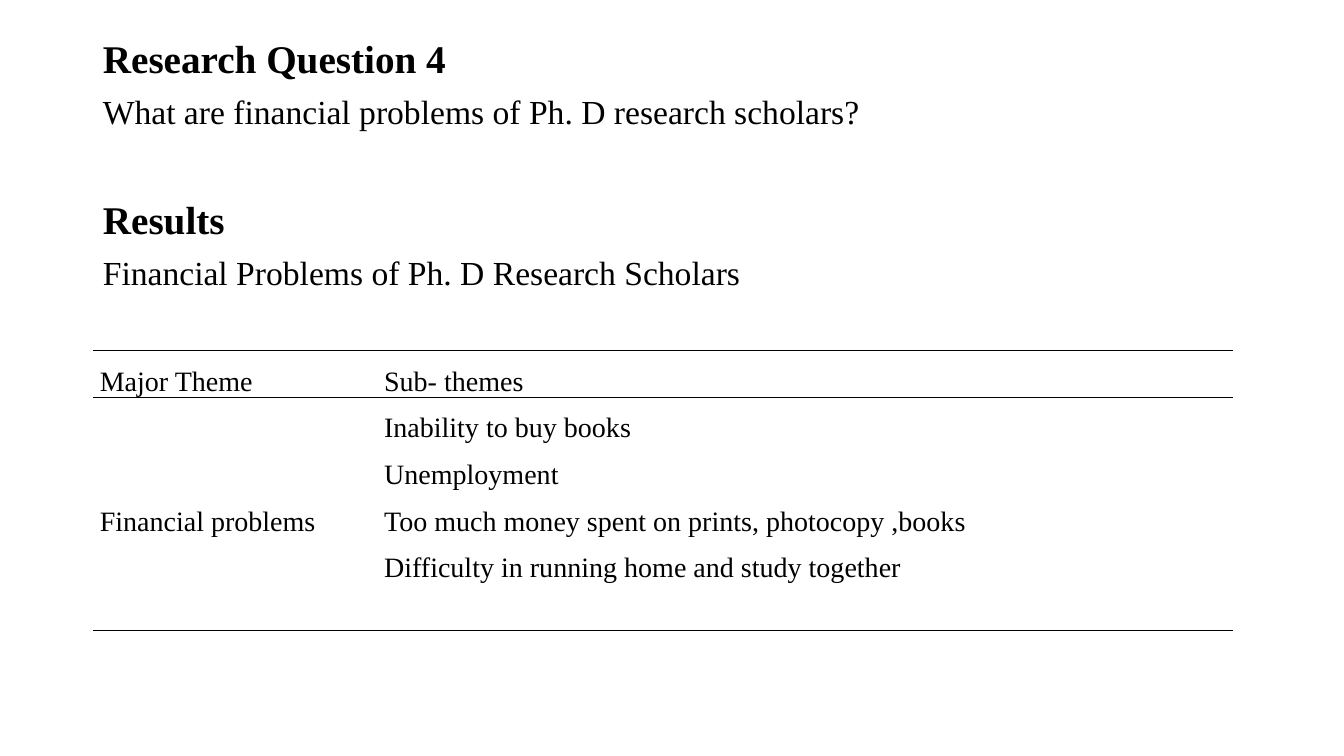
from lxml import etree
from pptx import Presentation
from pptx.dml.color import RGBColor
from pptx.enum.text import MSO_AUTO_SIZE
from pptx.oxml.ns import qn
from pptx.util import Inches, Pt

NO_AUTOFIT = MSO_AUTO_SIZE.NONE
FONT = "Times New Roman"
BLACK = "000000"

HEADING, DETAIL = (28, True), (24, False)
BODY_LINES = [
    ("Research Question 4", HEADING, 10),
    ("What are financial problems of Ph. D research scholars?", DETAIL, 10),
    ("Results", HEADING, 49),
    ("Financial Problems of Ph. D Research Scholars", DETAIL, 10),
]
THEME_ROWS = [
    ("Major Theme", "Sub- themes"),
    ("", "Inability to buy books"),
    ("", "Unemployment"),
    ("Financial problems", "Too much money spent on prints, photocopy ,books"),
    ("", "Difficulty in running home and study together"),
    ("", ""),
]
COLUMN_WIDTHS = (2.82, 8.49)
ROW_HEIGHT = 0.46
RULES_BY_ROW = {0: ("T", "B"), 1: ("T",), len(THEME_ROWS) - 1: ("B",)}


def color(value):
    return RGBColor.from_string(value)


def add_text(paragraph, text, size, bold=False):
    run = paragraph.add_run()
    run.text = text
    run.font.name = FONT
    run.font.size = Pt(size)
    run.font.bold = bold
    run.font.color.rgb = color(BLACK)


def set_borders(cell, ruled_sides):
    properties = cell._tc.get_or_add_tcPr()
    for position, side in enumerate("LRTB"):
        line = etree.Element(qn(f"a:ln{side}"), w=str(Pt(1)))
        if side in ruled_sides:
            fill = etree.SubElement(line, qn("a:solidFill"))
            etree.SubElement(fill, qn("a:srgbClr"), val=BLACK)
        else:
            etree.SubElement(line, qn("a:noFill"))
        properties.insert(position, line)


def fill_body(body):
    body.left, body.top = Inches(0.92), Inches(0.34)
    body.width, body.height = Inches(11.5), Inches(6.42)
    frame = body.text_frame
    frame.auto_size = NO_AUTOFIT
    for index, (text, (size, bold), gap) in enumerate(BODY_LINES):
        paragraph = frame.add_paragraph() if index else frame.paragraphs[0]
        paragraph.line_spacing = 0.9
        paragraph.space_before = Pt(gap)
        properties = paragraph._p.get_or_add_pPr()
        properties.set("marL", "0")
        properties.set("indent", "0")
        etree.SubElement(properties, qn("a:buNone"))
        add_text(paragraph, text, size, bold)


def add_theme_table(slide):
    table = slide.shapes.add_table(
        len(THEME_ROWS), len(COLUMN_WIDTHS), Inches(0.92), Inches(3.48),
        Inches(sum(COLUMN_WIDTHS)), Inches(ROW_HEIGHT * len(THEME_ROWS)),
    ).table
    table.first_row = False
    table.horz_banding = False
    for column, width in zip(table.columns, COLUMN_WIDTHS):
        column.width = Inches(width)
    for row_index, texts in enumerate(THEME_ROWS):
        for column_index, text in enumerate(texts):
            cell = table.cell(row_index, column_index)
            cell.margin_left = cell.margin_right = Inches(0.07)
            cell.margin_top = cell.margin_bottom = 0
            cell.fill.background()
            set_borders(cell, RULES_BY_ROW.get(row_index, ()))
            if text:
                paragraph = cell.text_frame.paragraphs[0]
                paragraph.line_spacing = 1.5
                add_text(paragraph, text, 20)


def main():
    presentation = Presentation()
    presentation.slide_width = Inches(13.33)
    presentation.slide_height = Inches(7.5)
    slide = presentation.slides.add_slide(presentation.slide_layouts[1])
    title = slide.shapes.title
    title._element.getparent().remove(title._element)
    fill_body(slide.placeholders[1])
    add_theme_table(slide)
    presentation.save("out.pptx")


if __name__ == "__main__":
    main()
